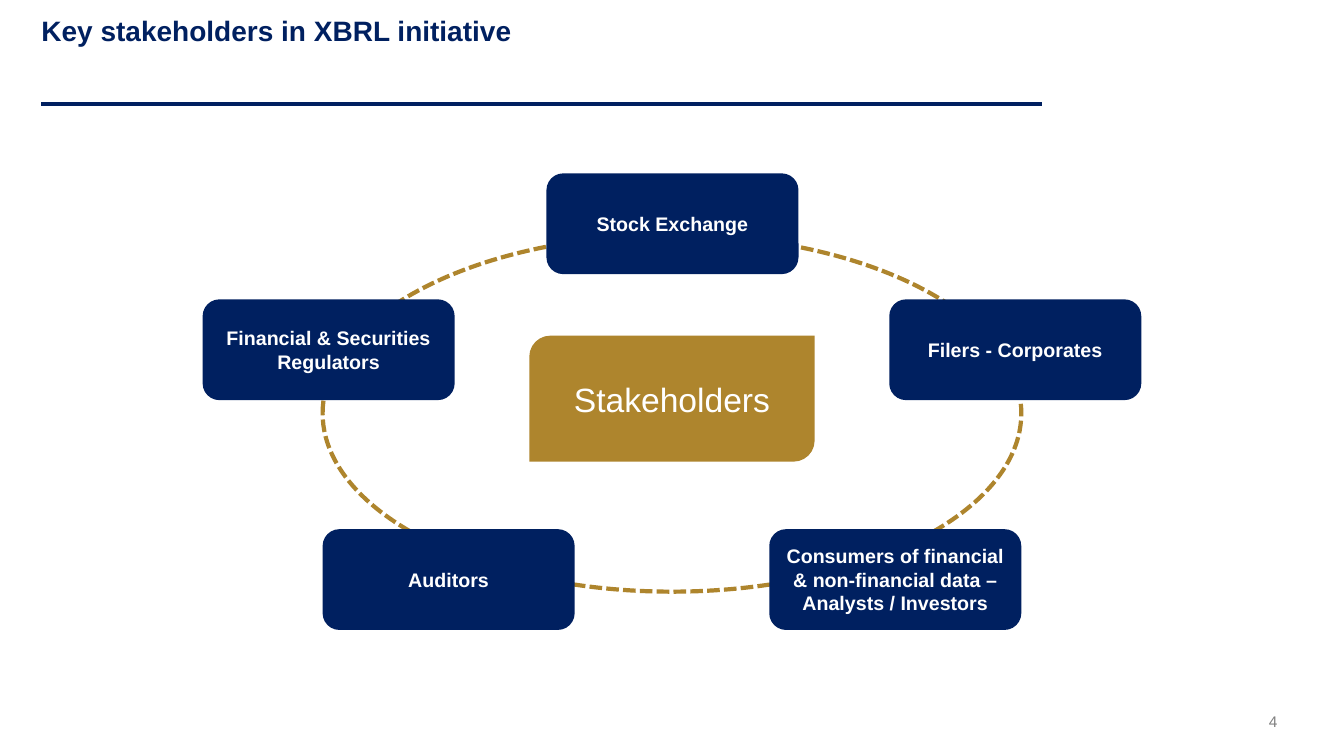
from dataclasses import dataclass

from lxml import etree
from pptx import Presentation
from pptx.dml.color import RGBColor
from pptx.enum.dml import MSO_LINE
from pptx.enum.shapes import MSO_CONNECTOR, MSO_SHAPE
from pptx.enum.text import MSO_ANCHOR, MSO_AUTO_SIZE, PP_ALIGN
from pptx.oxml.ns import qn
from pptx.shapes.autoshape import Shape
from pptx.slide import Slide
from pptx.text.text import TextFrame
from pptx.util import Emu, Pt

PX = 9144  # 100 px to the inch
SYS_DASH = MSO_LINE.SQUARE_DOT
ROUNDED = MSO_SHAPE.ROUNDED_RECTANGLE
DIAGONAL = MSO_SHAPE.ROUND_2_DIAG_RECTANGLE
OVAL = MSO_SHAPE.OVAL
STRAIGHT = MSO_CONNECTOR.STRAIGHT
LEFT, CENTER, RIGHT = PP_ALIGN.LEFT, PP_ALIGN.CENTER, PP_ALIGN.RIGHT
TOP, MIDDLE = MSO_ANCHOR.TOP, MSO_ANCHOR.MIDDLE


@dataclass(frozen=True)
class Theme:
    font: str = "Arial"
    navy: RGBColor = RGBColor(0x00, 0x20, 0x60)
    gold: RGBColor = RGBColor(0xAE, 0x85, 0x2D)
    white: RGBColor = RGBColor(0xFF, 0xFF, 0xFF)
    gray: RGBColor = RGBColor(0x80, 0x80, 0x80)
    title: int = 20
    hub: int = 24
    label: int = 14
    number: int = 11
    line: int = 3


@dataclass(frozen=True)
class Box:
    left: int
    top: int
    width: int
    height: int

    def emu(self) -> tuple[Emu, ...]:
        return tuple(Emu(v * PX) for v in
                     (self.left, self.top, self.width, self.height))


@dataclass(frozen=True)
class Stakeholder:
    label: str
    left: int
    top: int

    def box(self) -> Box:
        return Box(self.left, self.top, 250, 100)


THEME = Theme()
TITLE = Box(41, 14, 992, 88)
RING = Box(320, 233, 693, 354)
HUB = Box(525, 333, 283, 125)
NUMBER = Box(1162, 706, 105, 22)
RULE_Y = 103
STAKEHOLDERS = [
    Stakeholder("Financial & Securities Regulators", 201, 297),
    Stakeholder("Stock Exchange", 542, 172),
    Stakeholder("Filers - Corporates", 882, 297),
    Stakeholder("Auditors", 320, 525),
    Stakeholder("Consumers of financial & non-financial data – Analysts / Investors",
                763, 525),
]


def write(tf: TextFrame, text: str, size: int, color: RGBColor,
          align: PP_ALIGN, anchor: MSO_ANCHOR, bold: bool = False) -> None:
    tf.text = text
    tf.word_wrap = True
    tf.vertical_anchor = anchor
    p = tf.paragraphs[0]
    p.alignment = align
    font = p.runs[0].font
    font.name, font.size, font.bold = THEME.font, Pt(size), bold
    font.color.rgb = color


def set_insets(tf: TextFrame, top: int = 0) -> None:
    tf.margin_left = tf.margin_right = tf.margin_bottom = 0
    tf.margin_top = Emu(top * PX)


def add_title(s: Slide, text: str) -> None:
    sp = s.shapes.title
    sp.left, sp.top, sp.width, sp.height = TITLE.emu()
    tf = sp.text_frame
    write(tf, text, THEME.title, THEME.navy, LEFT, TOP, bold=True)
    set_insets(tf, top=4)
    tf.auto_size = MSO_AUTO_SIZE.NONE
    tf.paragraphs[0].line_spacing = 0.85


def add_rule(s: Slide) -> None:
    y = Emu(RULE_Y * PX)
    rule = s.shapes.add_connector(STRAIGHT, Emu(TITLE.left * PX), y,
                                  Emu((TITLE.left + TITLE.width) * PX), y)
    rule.line.color.rgb = THEME.navy
    rule.line.width = Pt(THEME.line)
    etree.SubElement(rule.line._get_or_add_ln().getparent(), qn("a:effectLst"))


def add_ring(s: Slide) -> None:
    """Draw the dashed ellipse that links the stakeholders."""
    sp = s.shapes.add_shape(OVAL, *RING.emu())
    sp.shadow.inherit = False
    sp.fill.background()
    sp.line.color.rgb = THEME.gold
    sp.line.width = Pt(THEME.line)
    sp.line.dash_style = SYS_DASH


def add_block(s: Slide, kind: MSO_SHAPE, box: Box, fill: RGBColor,
              text: str, size: int, bold: bool) -> Shape:
    sp = s.shapes.add_shape(kind, *box.emu())
    sp.shadow.inherit = False
    sp.fill.solid()
    sp.fill.fore_color.rgb = fill
    sp.line.fill.background()
    write(sp.text_frame, text, size, THEME.white, CENTER, MIDDLE, bold)
    return sp


def add_number(s: Slide, number: str) -> None:
    tf = s.shapes.add_textbox(*NUMBER.emu()).text_frame
    write(tf, number, THEME.number, THEME.gray, RIGHT, TOP)
    set_insets(tf)


def main() -> None:
    prs = Presentation()
    prs.slide_width, prs.slide_height = Emu(1333 * PX), Emu(750 * PX)
    s = prs.slides.add_slide(prs.slide_layouts.get_by_name("Title Only"))
    add_number(s, "4")
    add_rule(s)
    add_title(s, "Key stakeholders in XBRL initiative")
    add_ring(s)
    for holder in STAKEHOLDERS:
        add_block(s, ROUNDED, holder.box(), THEME.navy,
                  holder.label, THEME.label, bold=True)
    add_block(s, DIAGONAL, HUB, THEME.gold, "Stakeholders", THEME.hub, bold=False)
    prs.save("out.pptx")


if __name__ == "__main__":
    main()
